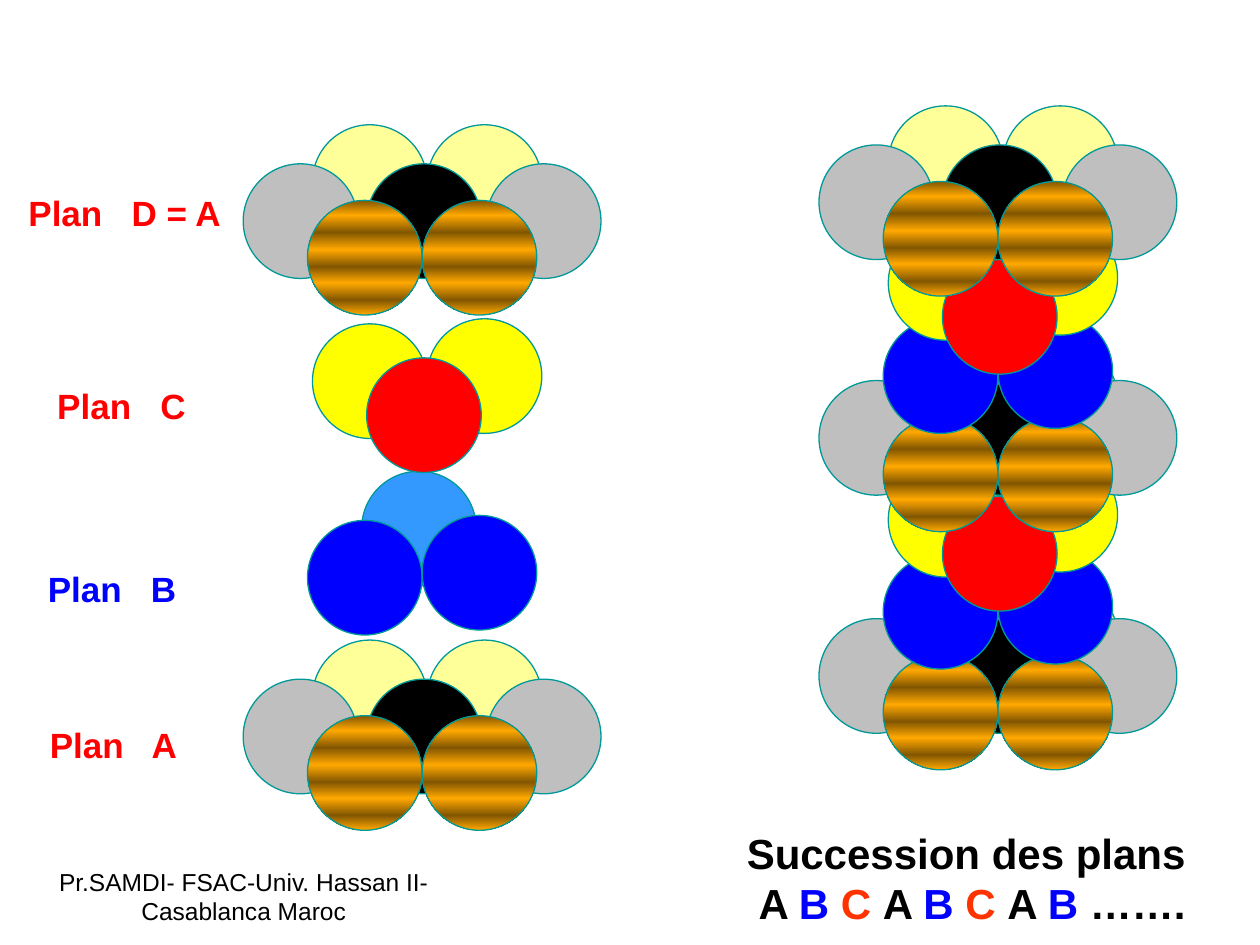
"""Build a slide of stacked atomic planes in an ABC close-packed succession."""
import copy
from dataclasses import dataclass
from typing import NamedTuple

import pptx
import pptx.dml.color
import pptx.enum.dml
import pptx.enum.shapes
import pptx.enum.text
import pptx.util
from pptx.util import Inches


@dataclass(frozen=True)
class Theme:
    font: str = "Arial"
    white: str = "FFFFFF"
    black: str = "000000"
    red: str = "FF0000"
    orange: str = "FF3300"
    blue: str = "0000FF"
    sky: str = "3399FF"
    yellow: str = "FFFF00"
    cream: str = "FFFF99"
    grey: str = "BFBFBF"
    outline: str = "009999"
    bronze: tuple = ("825600", "FFA800")
    bronze_stops: tuple = (0, 0.13, 0.28, 0.43, 0.58, 0.72, 0.87, 1)
    label_size: int = 20
    title_size: int = 24
    footer_size: int = 14
    line_width: float = 0.75


class Atom(NamedTuple):
    x: float
    y: float
    fill: str | tuple


class Plane(NamedTuple):
    kind: str
    x: float
    y: float


class Label(NamedTuple):
    text: str
    color: str
    x: float
    y: float
    w: float


class Run(NamedTuple):
    text: str
    color: str


THEME = Theme()
DIAMETER = 0.91
LEFT, RIGHT = 1.93, 6.5

ATOMS = {
    "A": [
        Atom(0.55, 0, THEME.cream),
        Atom(1.46, 0, THEME.cream),
        Atom(0.98, 0.31, THEME.black),
        Atom(0, 0.31, THEME.grey),
        Atom(1.93, 0.31, THEME.grey),
        Atom(0.51, 0.6, THEME.bronze),
        Atom(1.42, 0.6, THEME.bronze),
    ],
    "B": [
        Atom(0.94, 0, THEME.sky),
        Atom(0.51, 0.39, THEME.blue),
        Atom(1.42, 0.35, THEME.blue),
    ],
    "C": [
        Atom(0.55, 0.04, THEME.yellow),
        Atom(1.46, 0, THEME.yellow),
        Atom(0.98, 0.31, THEME.red),
    ],
}

PLANES = [
    Plane("A", LEFT, 5.08),
    Plane("B", LEFT, 3.74),
    Plane("C", LEFT, 2.53),
    Plane("A", LEFT, 0.99),
    Plane("A", RIGHT, 4.6),
    Plane("B", RIGHT, 4.01),
    Plane("C", RIGHT, 3.63),
    Plane("A", RIGHT, 2.71),
    Plane("B", RIGHT, 2.14),
    Plane("C", RIGHT, 1.75),
    Plane("A", RIGHT, 0.84),
]

LABELS = [
    Label("Plan   A", THEME.red, 0.29, 5.69, 1.22),
    Label("Plan   B", THEME.blue, 0.28, 4.45, 1.22),
    Label("Plan   C", THEME.red, 0.35, 3, 1.23),
    Label("Plan   D = A", THEME.red, 0.12, 1.47, 1.74),
]

LETTER_COLORS = {"A": THEME.black, "B": THEME.blue, "C": THEME.orange}


def rgb(value: str) -> pptx.dml.color.RGBColor:
    """Turn a hex value into a colour."""
    return pptx.dml.color.RGBColor.from_string(value)


def fill_solid(sp, color: str) -> None:
    """Fill a shape with one colour."""
    sp.fill.solid()
    sp.fill.fore_color.rgb = rgb(color)


def fill_bronze(sp) -> None:
    """Fill a shape with alternating dark and bright horizontal bands."""
    sp.fill.gradient()
    sp.fill.gradient_angle = 270
    first = sp._element.spPr.find(".//" + pptx.oxml.ns.qn("a:gs"))
    for _ in THEME.bronze_stops[2:]:
        first.addnext(copy.deepcopy(first))
    for i, (stop, position) in enumerate(zip(sp.fill.gradient_stops, THEME.bronze_stops)):
        stop.color.rgb = rgb(THEME.bronze[i % 2])
        stop.position = position


def draw_plane(slide, plane: Plane) -> None:
    """Draw one plane as a group of atoms, from back to front."""
    group = slide.shapes.add_group_shape()
    for atom in ATOMS[plane.kind]:
        sp = group.shapes.add_shape(
            pptx.enum.shapes.MSO_SHAPE.OVAL,
            Inches(plane.x + atom.x), Inches(plane.y + atom.y),
            Inches(DIAMETER), Inches(DIAMETER),
        )
        sp.shadow.inherit = False
        if atom.fill == THEME.bronze:
            fill_bronze(sp)
        else:
            fill_solid(sp, atom.fill)
        sp.line.color.rgb = rgb(THEME.outline)
        sp.line.width = pptx.util.Pt(THEME.line_width)


def write_text(sp, lines: list[list[Run]], size: int, bold: bool, frame: dict) -> None:
    """Write centred lines of coloured runs into a shape."""
    tf = sp.text_frame
    for name, value in frame.items():
        setattr(tf, name, value)
    font = {"name": THEME.font, "size": pptx.util.Pt(size), "bold": bold}
    for i, line in enumerate(lines):
        p = tf.add_paragraph() if i else tf.paragraphs[0]
        p.alignment = pptx.enum.text.PP_ALIGN.CENTER
        for run in line:
            r = p.add_run()
            r.text = run.text
            for name, value in font.items():
                setattr(r.font, name, value)
            r.font.color.rgb = rgb(run.color)


def draw_panel(slide, box: tuple, lines: list[list[Run]], size: int, wrap: bool) -> None:
    """Draw a white panel with bold text."""
    sp = slide.shapes.add_shape(pptx.enum.shapes.MSO_SHAPE.RECTANGLE, *map(Inches, box))
    sp.shadow.inherit = False
    fill_solid(sp, THEME.white)
    sp.line.fill.background()
    write_text(sp, lines, size, True, {
        "word_wrap": wrap,
        "auto_size": pptx.enum.text.MSO_AUTO_SIZE.SHAPE_TO_FIT_TEXT,
        "vertical_anchor": pptx.enum.text.MSO_ANCHOR.MIDDLE,
    })


def main() -> None:
    """Build and save the slide."""
    prs = pptx.Presentation()
    prs.slide_width, prs.slide_height = Inches(10), Inches(7.5)
    slide = prs.slides.add_slide(prs.slide_layouts[6])
    for plane in PLANES:
        draw_plane(slide, plane)
    for label in LABELS:
        draw_panel(slide, (label.x, label.y, label.w, 0.44),
                   [[Run(label.text, label.color)]], THEME.label_size, False)
    letters = [Run(f"{c} ", LETTER_COLORS[c]) for c in "ABCABCAB"]
    draw_panel(slide, (5.63, 6.51, 4.17, 0.91),
               [[Run("Succession des plans ", THEME.black)],
                [*letters, Run("…….", THEME.black)]], THEME.title_size, True)
    footer = slide.shapes.add_textbox(*map(Inches, (0.35, 6.83, 3.17, 0.52)))
    write_text(footer, [[Run("Pr.SAMDI- FSAC-Univ. Hassan II- Casablanca Maroc", THEME.black)]],
               THEME.footer_size, False, {"word_wrap": True})
    prs.save("out.pptx")


if __name__ == "__main__":
    main()
